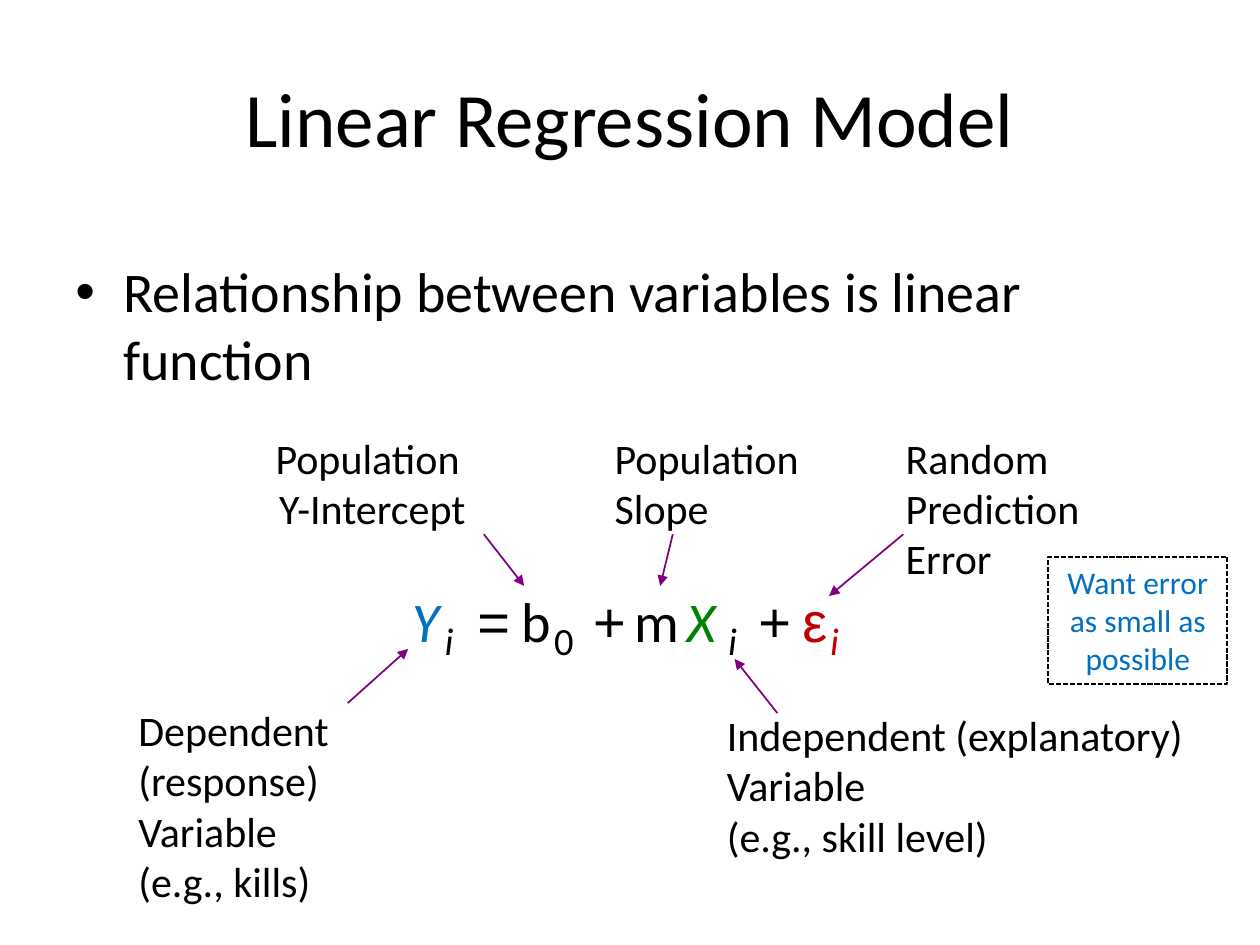
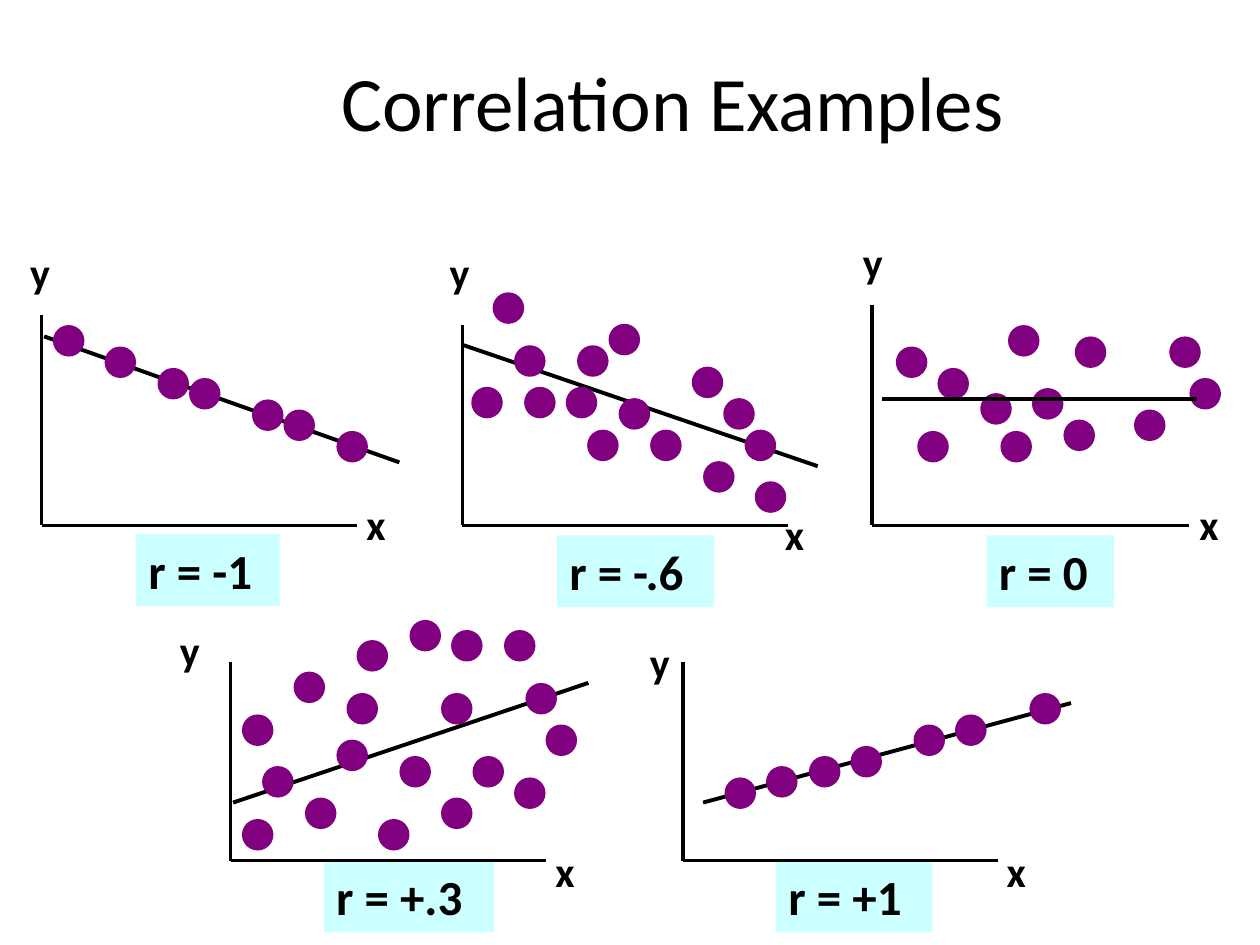
import dataclasses

import pptx
import pptx.dml.color
import pptx.enum.dml
import pptx.enum.shapes
import pptx.enum.text
import pptx.oxml.ns
import pptx.util
from lxml import etree

PX = 9144  # EMU per px, 100 px to the inch
RGBColor = pptx.dml.color.RGBColor
BLACK = RGBColor(0x00, 0x00, 0x00)
BLUE = RGBColor(0x00, 0x70, 0xC0)
GREEN = RGBColor(0x00, 0x80, 0x00)
RED = RGBColor(0xC0, 0x00, 0x00)
PURPLE = RGBColor(0x80, 0x00, 0x80)
PALE_CYAN = RGBColor(0xCC, 0xFF, 0xFF)
FONT = "Calibri"
SYMBOL_FONT = "Arial"
DOT_SIZE = 25
ALIGN = pptx.enum.text.PP_ALIGN
ANCHOR = pptx.enum.text.MSO_ANCHOR
SHAPE = pptx.enum.shapes.MSO_SHAPE


@dataclasses.dataclass
class Scatter:
    """One plot; every place is relative to the corner where its axes meet."""
    origin: tuple
    axis_width: int
    axis_height: int
    x_label: tuple
    y_label: tuple
    badge: tuple  # left, top, width
    caption: str
    trend: tuple  # start x, start y, end x, end y
    dots: list
    trend_on_top: bool = False


SCATTERS = [
    Scatter((33, 417), 250, 167, (248, -26), (-19, -226), (75, 7, 114), "r = -1",
            (2, -150, 284, -50),
            [(9, -159), (50, -142), (92, -125), (117, -117), (167, -100),
             (192, -92), (234, -75)]),
    Scatter((367, 417), 258, 159, (246, -18), (-20, -226), (75, 8, 125), "r = -.6",
            (1, -143, 282, -47),
            [(7, -110), (24, -185), (41, -143), (49, -110), (82, -110),
             (91, -143), (99, -76), (116, -160), (124, -101), (149, -76),
             (182, -126), (191, -51), (207, -101), (224, -76), (232, -35)]),
    Scatter((692, 417), 252, 175, (250, -26), (-17, -234), (91, 8, 101), "r = 0",
            (8, -100, 258, -100),
            [(19, -142), (36, -75), (52, -125), (86, -105), (102, -75),
             (108, -159), (127, -109), (152, -84), (161, -150), (208, -92),
             (236, -150), (252, -117)], trend_on_top=True),
    Scatter((183, 683), 250, 158, (248, -17), (-50, -192), (74, 0, 135), "r = +.3",
            (2, -46, 284, -141),
            [(9, -33), (9, -116), (25, -75), (50, -150), (59, -50),
             (84, -96), (92, -133), (100, -175), (117, -33), (134, -83),
             (142, -191), (167, -50), (167, -133), (175, -183), (192, -83),
             (217, -183), (225, -66), (234, -141), (250, -108)]),
    Scatter((542, 683), 250, 158, (247, -17), (-36, -183), (74, 0, 124), "r = +1",
            (16, -46, 308, -125),
            [(33, -66), (66, -75), (100, -83), (133, -91), (183, -108),
             (216, -116), (275, -133)]),
]

# left, text, colour, italic, font
EQUATION_TERMS = [
    (0, "Y", BLUE, True, FONT), (52, "=", BLACK, False, SYMBOL_FONT),
    (87, "b", BLACK, False, FONT), (144, "+", BLACK, False, SYMBOL_FONT),
    (177, "m", BLACK, False, FONT), (218, "X", GREEN, True, FONT),
    (275, "+", BLACK, False, SYMBOL_FONT), (310, "ε", RED, False, SYMBOL_FONT),
]
EQUATION_SUBSCRIPTS = [
    (26, "i", BLACK, True, FONT), (113, "0", BLACK, False, FONT),
    (251, "i", BLACK, True, FONT), (332, "i", RED, True, FONT),
]

CALLOUTS = [
    ((100, 554, 241, 171), ["Dependent (response) Variable", "(e.g., kills)"], ALIGN.LEFT),
    ((567, 558, 408, 131), ["Independent (explanatory) Variable ", "(e.g., skill level)"],
     ALIGN.LEFT),
    ((478, 338, 197, 91), ["Population Slope"], ALIGN.LEFT),
    ((175, 338, 241, 91), ["Population ", "Y-Intercept"], ALIGN.CENTER),
    ((709, 338, 174, 131), ["Random Prediction Error"], ALIGN.LEFT),
]
CALLOUT_ARROWS = [
    (276, 558, 324, 515), (617, 566, 583, 523), (384, 424, 416, 465),
    (534, 424, 524, 465), (717, 424, 658, 473),
]


def to_emu(lengths):
    return [length * PX for length in lengths]


def write_text(shape, lines, size, color=BLACK, font=FONT, bold=False, italic=False,
               align=ALIGN.LEFT, anchor=ANCHOR.TOP, wrap=True):
    """Fill the shape with one paragraph, its lines parted by line breaks."""
    frame = shape.text_frame
    frame.word_wrap = wrap
    frame.vertical_anchor = anchor
    if not wrap:
        frame.auto_size = pptx.enum.text.MSO_AUTO_SIZE.SHAPE_TO_FIT_TEXT
    paragraph = frame.paragraphs[0]
    paragraph.alignment = align
    for index, line in enumerate(lines):
        if index:
            paragraph.add_line_break()
        run = paragraph.add_run()
        run.text = line
        run.font.name = font
        run.font.size = pptx.util.Pt(size)
        run.font.bold = bold
        run.font.italic = italic
        run.font.color.rgb = color
    return paragraph


def add_text(slide, box, lines, size, **style):
    return write_text(slide.shapes.add_textbox(*to_emu(box)), lines, size, **style)


def add_title(slide, box, title):
    return add_text(slide, box, [title], 44, align=ALIGN.CENTER, anchor=ANCHOR.MIDDLE)


def add_shape(slide, kind, box, fill=None):
    shape = slide.shapes.add_shape(kind, *to_emu(box))
    shape.shadow.inherit = False
    shape.line.fill.background()
    if fill is None:
        shape.fill.background()
    else:
        shape.fill.solid()
        shape.fill.fore_color.rgb = fill
    return shape


def add_line(slide, ends, width, color=BLACK, arrow=False):
    line = slide.shapes.add_connector(
        pptx.enum.shapes.MSO_CONNECTOR.STRAIGHT, *to_emu(ends))
    line.line.color.rgb = color
    line.line.width = pptx.util.Pt(width)
    if arrow:
        etree.SubElement(line.line._get_or_add_ln(), pptx.oxml.ns.qn("a:tailEnd"),
                         type="triangle")
    etree.SubElement(line._element.spPr, pptx.oxml.ns.qn("a:effectLst"))


def add_bullet(slide, box, text):
    properties = add_text(slide, box, [text], 32)._p.get_or_add_pPr()
    indent = 38 * PX
    properties.set("marL", str(indent))
    properties.set("indent", str(-indent))
    etree.SubElement(properties, pptx.oxml.ns.qn("a:buFont"), typeface=SYMBOL_FONT)
    etree.SubElement(properties, pptx.oxml.ns.qn("a:buChar"), char="•")


def add_equation(slide, left, top):
    rows = [(EQUATION_TERMS, top, 64, 32), (EQUATION_SUBSCRIPTS, top + 24, 47, 22)]
    for terms, row_top, height, size in rows:
        for offset, text, color, italic, font in terms:
            add_text(slide, (left + offset, row_top, 45 if size == 32 else 28, height),
                     [text], size, color=color, italic=italic, font=font, wrap=False)


def add_note(slide, box, text):
    note = add_shape(slide, SHAPE.RECTANGLE, box)
    note.line.color.rgb = BLACK
    note.line.width = pptx.util.Pt(1)
    note.line.dash_style = pptx.enum.dml.MSO_LINE.SQUARE_DOT
    write_text(note, [text], 18, color=BLUE, align=ALIGN.CENTER)


def add_scatter(slide, scatter):
    left, base = scatter.origin

    def add_trend():
        x1, y1, x2, y2 = scatter.trend
        add_line(slide, (left + x1, base + y1, left + x2, base + y2), 2.25)

    badge_x, badge_y, badge_width = scatter.badge
    badge = add_shape(slide, SHAPE.RECTANGLE,
                      (left + badge_x, base + badge_y, badge_width, 57), PALE_CYAN)
    write_text(badge, [scatter.caption], 28, bold=True, wrap=False)
    add_line(slide, (left, base - scatter.axis_height, left, base), 2)
    add_line(slide, (left, base, left + scatter.axis_width, base), 2)
    if not scatter.trend_on_top:
        add_trend()
    for x, y in scatter.dots:
        add_shape(slide, SHAPE.OVAL, (left + x, base + y, DOT_SIZE, DOT_SIZE), PURPLE)
    if scatter.trend_on_top:
        add_trend()
    for name, (x, y) in (("x", scatter.x_label), ("y", scatter.y_label)):
        add_text(slide, (left + x, base + y, 39, 50), [name], 24, bold=True, wrap=False)


def build_model_slide(slide):
    add_equation(slide, 317, 461)
    add_title(slide, (50, 30, 900, 125), "Linear Regression Model")
    add_bullet(slide, (50, 199, 925, 461), "Relationship between variables is linear function")
    for box, lines, align in CALLOUTS:
        add_text(slide, box, lines, 24, align=align)
    for ends in CALLOUT_ARROWS:
        add_line(slide, ends, 1, PURPLE, arrow=True)
    add_note(slide, (832, 442, 142, 101), "Want error as small as possible")


def build_correlation_slide(slide):
    title = add_title(slide, (108, 33, 852, 108), "Correlation Examples")
    title.line_spacing = 0.8
    for scatter in SCATTERS:
        add_scatter(slide, scatter)


def main():
    presentation = pptx.Presentation()
    presentation.slide_width, presentation.slide_height = to_emu((1000, 750))
    blank = presentation.slide_layouts[6]
    for build in (build_model_slide, build_correlation_slide):
        build(presentation.slides.add_slide(blank))
    presentation.save("out.pptx")


if __name__ == "__main__":
    main()
